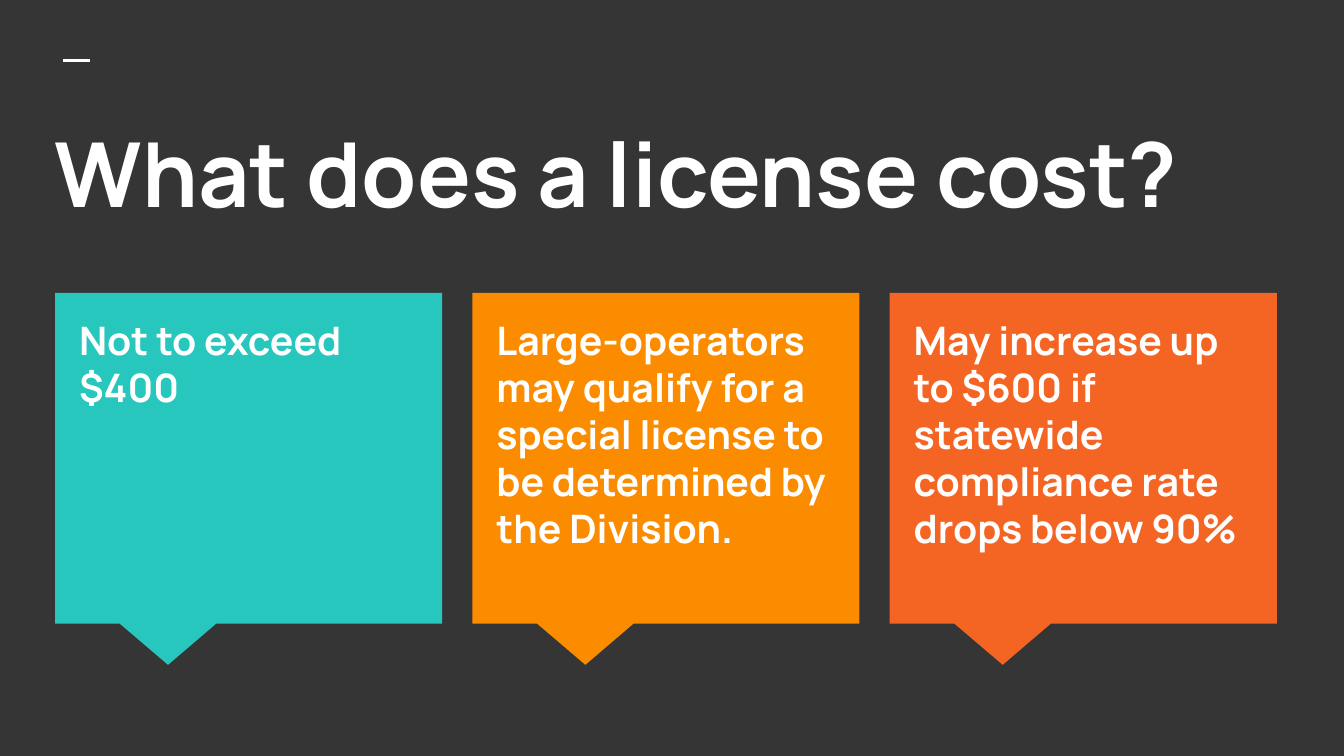
from lxml.etree import SubElement
from pptx import Presentation
from pptx.dml.color import RGBColor
from pptx.enum.shapes import MSO_CONNECTOR, MSO_SHAPE
from pptx.enum.text import MSO_ANCHOR, PP_ALIGN
from pptx.oxml.ns import qn
from pptx.util import Inches, Pt

# Content
TITLE = "What does a license cost?"
CARDS = [
    ("Not to exceed $400", "teal"),
    ("Large-operators may qualify for a special license to be determined by the Division.", "amber"),
    ("May increase up to $600 if statewide compliance rate drops below 90%", "orange"),
]
COLORS = {
    "background": "353535",
    "white": "FFFFFF",
    "teal": "27C7BD",
    "amber": "FB8C00",
    "orange": "F46524",
}
FONT = "Manrope"

# Widescreen slide and card row, in inches
SLIDE_WIDTH = 10
SLIDE_HEIGHT = SLIDE_WIDTH * 9 / 16
CARD_LEFT, LAST_CARD_LEFT, CARD_TOP = 0.41, 6.62, 2.18
CARD_WIDTH, CARD_HEIGHT = 2.88, 2.46
CARD_STEP = (LAST_CARD_LEFT - CARD_LEFT) / (len(CARDS) - 1)
TEXT_INSET_X, TEXT_INSET_Y = 0.08, 0.07
TEXT_WIDTH, TEXT_HEIGHT = 2.71, 2.19


def color(name):
    return RGBColor.from_string(COLORS[name])


def add_text(page, text, left, top, width, height, *, size, space_after=0):
    box = page.shapes.add_textbox(Inches(left), Inches(top), Inches(width), Inches(height))
    frame = box.text_frame
    frame.word_wrap = True
    frame.vertical_anchor = MSO_ANCHOR.TOP
    frame.margin_left = frame.margin_right = Inches(0.1)
    frame.margin_top = frame.margin_bottom = Inches(0.1)
    para = frame.paragraphs[0]
    para.alignment = PP_ALIGN.LEFT
    para.space_after = Pt(space_after)
    span = para.add_run()
    span.text = text
    span.font.name = FONT
    span.font.size = Pt(size)
    span.font.bold = True
    span.font.color.rgb = color("white")


def add_card(page, left, fill):
    card = page.shapes.add_shape(
        MSO_SHAPE.RECTANGULAR_CALLOUT,
        Inches(left), Inches(CARD_TOP), Inches(CARD_WIDTH), Inches(CARD_HEIGHT),
    )
    card.adjustments[0] = -0.208
    card.adjustments[1] = 0.625
    card.shadow.inherit = False
    card.fill.solid()
    card.fill.fore_color.rgb = color(fill)
    card.line.fill.background()


deck = Presentation()
deck.slide_width, deck.slide_height = Inches(SLIDE_WIDTH), Inches(SLIDE_HEIGHT)
page = deck.slides.add_slide(deck.slide_layouts[6])
page.background.fill.solid()
page.background.fill.fore_color.rgb = color("background")

# Accent dash and title
dash = page.shapes.add_connector(
    MSO_CONNECTOR.STRAIGHT, Inches(0.47), Inches(0.45), Inches(0.67), Inches(0.45)
)
dash.line.color.rgb = color("white")
dash.line.width = Pt(1.5)
SubElement(dash.element.spPr, qn("a:effectLst"))
add_text(page, TITLE, 0.31, 0.78, 9.43, 1.12, size=48)

# Callout cards with their text
for index, (text, fill) in enumerate(CARDS):
    left = CARD_LEFT + index * CARD_STEP
    add_card(page, left, fill)
    add_text(page, text, left + TEXT_INSET_X, CARD_TOP + TEXT_INSET_Y,
             TEXT_WIDTH, TEXT_HEIGHT, size=21, space_after=12)

deck.save("out.pptx")
